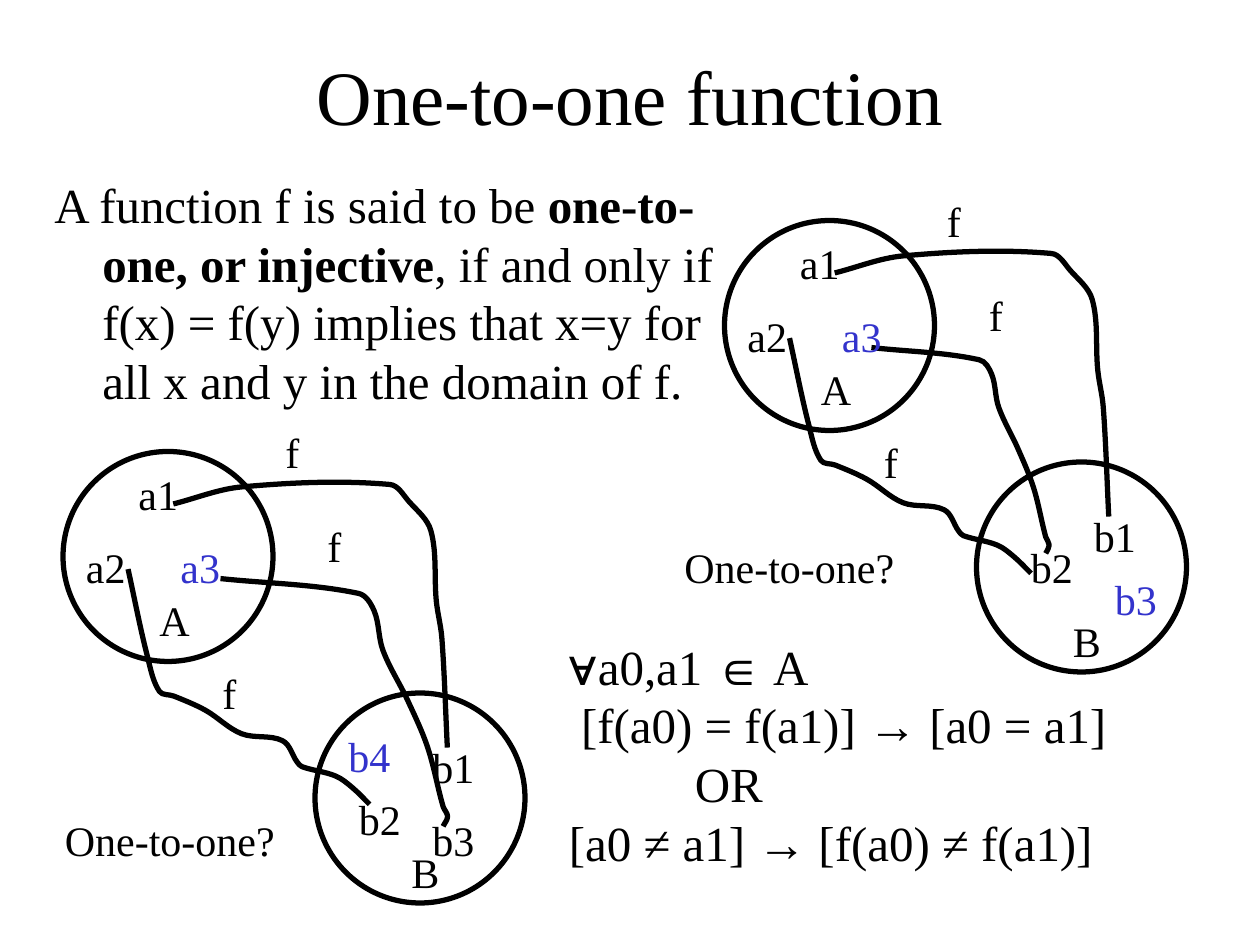
import math

from lxml import etree
from pptx import Presentation
from pptx import util as u
from pptx.dml.color import RGBColor
from pptx.enum import shapes, text
from pptx.oxml import ns

FONT = "Times New Roman"
BLACK, BLUE = "000000", "3333CC"
UNIT = 1 / 12  # grid step in inches; every place below is (column, row)
DIAMETER = 20  # size of a set
SET_B = (24, 23)  # corner of set B, seen from the corner of set A
LABEL_WIDTH, LABEL_HEIGHT, QUESTION_WIDTH = 10, 6, 25

# Bends that f takes, as shares of the way across and down from element to image
OVER_THE_TOP = [(0.25, -0.07), (0.79, -0.08), (0.86, -0.01), (0.94, 0.11),
                (0.96, 0.4), (0.98, 0.55)]
DOWN_THE_STAIRS = [(0.08, 0.37), (0.13, 0.52), (0.19, 0.54), (0.32, 0.6), (0.47, 0.7),
                   (0.64, 0.73), (0.7, 0.82), (0.72, 0.84), (0.86, 0.88), (0.93, 0.93)]
THROUGH_THE_MIDDLE = [(0.62, 0.06), (0.69, 0.13), (0.73, 0.29), (0.84, 0.49),
                      (0.93, 0.68), (1, 0.92), (1.02, 0.96)]

# What both mappings share, seen from the corner of set A
SHARED_LABELS = [("a1", (6, 1)), ("a2", (1, 8)), ("A", (8, 13)), ("b1", (34, 27)),
                 ("B", (32, 37)), ("f", (20, -3)), ("f", (14, 20)), ("f", (24, 6))]
SHARED_ARCS = [((10.5, 5), (36.6, 28.2), OVER_THE_TOP),  # a1 to b1
               ((6.2, 11.2), (29.2, 33.6), DOWN_THE_STAIRS)]  # a2 to b2

# The two mappings differ in where a3 goes and which elements are blue
MAPPINGS = [
    {"corner": (6, 43), "a3_arc": ((15, 12.1), (36.2, 35.7)), "question": (-1, 34),
     "black": [("b2", (27, 32)), ("b3", (34, 34))],
     "blue": [("a3", (10, 8)), ("b4", (26, 26))]},
    {"corner": (69, 21), "a3_arc": ((14, 12.1), (30.6, 31.7)), "question": (-5, 30),
     "black": [("b2", (28, 30))],
     "blue": [("a3", (10, 8)), ("b3", (36, 33))]},
]


def rgb(value):
    return RGBColor.from_string(value)


def grid(*steps):
    return [u.Inches(step * UNIT) for step in steps]


def shift(origin, place):
    return origin[0] + place[0], origin[1] + place[1]


def add_text(parent, box, pieces, size, color=BLACK):
    """Add one paragraph; pieces are (text, bold) pairs."""
    frame = parent.add_textbox(*grid(*box)).text_frame
    frame.word_wrap = True
    paragraph = frame.paragraphs[0]
    for content, bold in pieces:
        for index, line in enumerate(content.split("\n")):
            if index:
                paragraph.add_line_break()
            run = paragraph.add_run()
            run.text = line
            for key, value in {"name": FONT, "size": u.Pt(size), "bold": bold}.items():
                setattr(run.font, key, value)
            run.font.color.rgb = rgb(color)
    return paragraph


def set_indents(paragraph, **inches):
    for key, value in inches.items():
        paragraph._p.get_or_add_pPr().set(key, str(u.Inches(value)))


def outline(shape):
    shape.shadow.inherit = False
    shape.fill.background()
    shape.line.color.rgb = rgb(BLACK)
    shape.line.width = u.Pt(3)


def add_set(parent, corner):
    outline(parent.add_shape(shapes.MSO_SHAPE.OVAL, *grid(*corner, DIAMETER, DIAMETER)))


def smooth(knots):
    """Return Bézier points through the knots: the first, then three per bend."""
    padded = [knots[0], *knots, knots[-1]]
    # At each knot the curve runs parallel to the line between its neighbours
    angles = [math.atan2(after[1] - before[1], after[0] - before[0])
              for before, after in zip(padded, padded[2:])]
    points = [knots[0]]
    for index, (start, end) in enumerate(zip(knots, knots[1:])):
        reach = math.dist(start, end) / 3
        for knot, angle, length in ((start, angles[index], reach),
                                    (end, angles[index + 1], -reach)):
            points.append(shift(knot, (length * math.cos(angle), length * math.sin(angle))))
        points.append(end)
    return points


def add_arc(parent, start, end, bends):
    """Draw f from an element to its image."""
    shares = [(0, 0), *bends, (1, 1)]
    knots = [tuple(s + (e - s) * share for s, e, share in zip(start, end, pair))
             for pair in shares]
    points = [grid(*point) for point in smooth(knots)]
    builder = parent.build_freeform(*points[0])
    builder.add_line_segments(points[1:], close=False)
    arc = builder.convert_to_shape()
    # Join each three line steps into one Bézier bend
    steps = list(arc._element.iter(ns.qn("a:lnTo")))
    for first in range(0, len(steps), 3):
        bend = etree.SubElement(steps[first].getparent(), ns.qn("a:cubicBezTo"))
        for step in steps[first:first + 3]:
            bend.append(step[0])
            step.getparent().remove(step)
    outline(arc)


def add_label(parent, content, place, color=BLACK, width=LABEL_WIDTH):
    add_text(parent, (*place, width, LABEL_HEIGHT), [(content, False)], 24, color)


def add_mapping(slide, corner, a3_arc, question, black, blue):
    """Draw sets A and B, the arcs of f and all labels as one group."""
    diagram = slide.shapes.add_group_shape().shapes
    for set_corner in (corner, shift(corner, SET_B)):
        add_set(diagram, set_corner)
    for start, end, bends in [*SHARED_ARCS, (*a3_arc, THROUGH_THE_MIDDLE)]:
        add_arc(diagram, shift(corner, start), shift(corner, end), bends)
    for labels, color in ((SHARED_LABELS + black, BLACK), (blue, BLUE)):
        for content, place in labels:
            add_label(diagram, content, shift(corner, place), color)
    add_label(diagram, "One-to-one?", shift(corner, question), width=QUESTION_WIDTH)


def main():
    deck = Presentation()
    deck.slide_width, deck.slide_height = u.Inches(10), u.Inches(7.5)
    slide = deck.slides.add_slide(deck.slide_layouts[6])

    # Title
    title = add_text(slide.shapes, (9, 4, 102, 15), [("One-to-one function", False)], 44)
    title.alignment = text.PP_ALIGN.CENTER

    # Definition with a hanging indent
    definition = add_text(slide.shapes, (4, 16, 68, 29), [
        ("A function f is said to be ", False),
        ("one-to-one, or injective", True),
        (", if and only if f(x) = f(y) implies that x=y for all x and y "
         "in the domain of f.", False)], 28)
    set_indents(definition, marL=0.38, indent=-0.38)

    # Formal statement, with tab stops an inch apart
    statement = add_text(slide.shapes, (53, 60, 58, 23.6), [(
        "∀a0,a1 ∈ A\n [f(a0) = f(a1)] → [a0 = a1]\n\tOR\n"
        "[a0 ≠ a1] → [f(a0) ≠ f(a1)]", False)], 28)
    set_indents(statement, marL=0, indent=0, defTabSz=1)

    # Two mappings to judge
    for mapping in MAPPINGS:
        add_mapping(slide, **mapping)

    deck.save("out.pptx")


if __name__ == "__main__":
    main()
